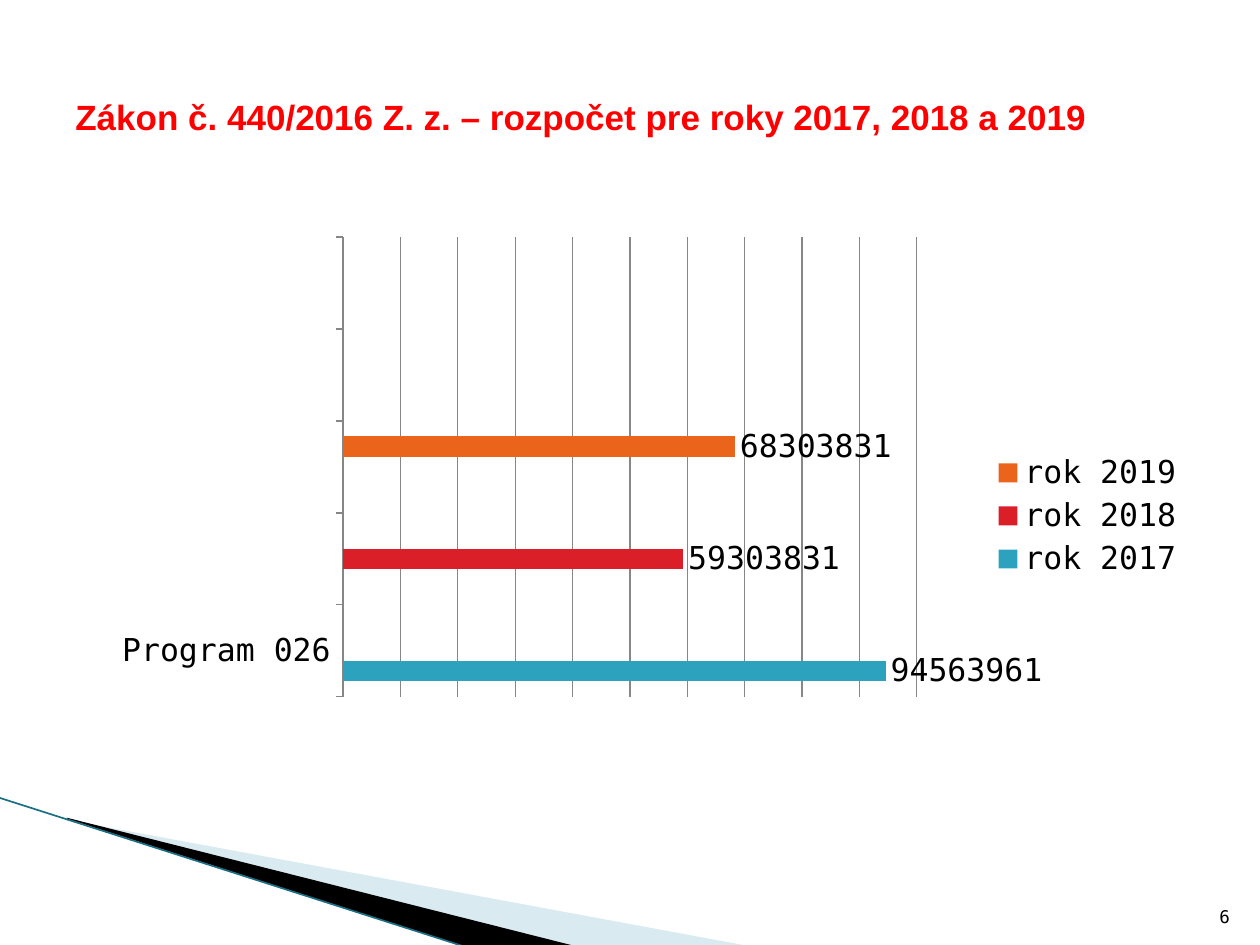
"""Build the budget slide: programme 026 spending for 2017 to 2019."""
from lxml import etree
from pptx import Presentation
from pptx.chart.data import CategoryChartData
from pptx.dml.color import RGBColor
from pptx.enum.chart import (XL_CHART_TYPE, XL_LABEL_POSITION, XL_LEGEND_POSITION,
                             XL_TICK_LABEL_POSITION, XL_TICK_MARK)
from pptx.enum.shapes import MSO_CONNECTOR
from pptx.enum.text import MSO_ANCHOR, PP_ALIGN
from pptx.oxml import parse_xml
from pptx.oxml.ns import nsdecls, qn
from pptx.util import Inches, Pt

BAR = XL_CHART_TYPE.BAR_CLUSTERED
OUTSIDE_END = XL_LABEL_POSITION.OUTSIDE_END
LEGEND_RIGHT = XL_LEGEND_POSITION.RIGHT
LABELS_LOW = XL_TICK_LABEL_POSITION.LOW
TICK_OUT, TICK_NONE = XL_TICK_MARK.OUTSIDE, XL_TICK_MARK.NONE
STRAIGHT = MSO_CONNECTOR.STRAIGHT
MIDDLE, BOTTOM = MSO_ANCHOR.MIDDLE, MSO_ANCHOR.BOTTOM
LEFT, RIGHT = PP_ALIGN.LEFT, PP_ALIGN.RIGHT

WIDTH, HEIGHT = Inches(10), Inches(7.5)
COLORS = {"title": "FF0000", "text": "000000", "pale": "A0CBDC", "dark": "000000",
          "edge": "1B6F84", "grid": "868686",
          "rok 2017": "2DA2BF", "rok 2018": "DA1F28", "rok 2019": "EB641B"}
MONO = "DejaVu Sans Mono"

TEXTS = [
    {"text": "Zákon č. 440/2016 Z. z. – rozpočet pre roky 2017, 2018 a 2019",
     "area": (5, 4, 90, 16.67), "anchor": MIDDLE, "align": LEFT, "color": "title",
     "font": {"name": "Arial", "size": Pt(20), "bold": True}},
    {"text": "6", "area": (94.6, 93.47, 4, 5.33), "anchor": BOTTOM, "align": RIGHT,
     "color": "text", "font": {"name": MONO, "size": Pt(10)}},
]
CATEGORIES = ["Program 026", "", "", "", ""]
BUDGETS = [("rok 2017", 94563961), ("rok 2018", 59303831), ("rok 2019", 68303831)]
CHART_AREA = (5, 21.6, 90, 66)
PLOT_AREA = {"x": 0.247, "y": 0.053, "w": 0.506, "h": 0.737}
AXIS_SCALE = {"minimum_scale": 0, "maximum_scale": 100_000_000, "major_unit": 10_000_000,
              "has_major_gridlines": True, "major_tick_mark": TICK_NONE, "visible": False}
CATEGORY_AXIS = {"has_major_gridlines": False, "major_tick_mark": TICK_OUT,
                 "minor_tick_mark": TICK_NONE, "tick_label_position": LABELS_LOW}
LEGEND = {"position": LEGEND_RIGHT, "include_in_layout": False}
LABELS = {"show_value": True, "position": OUTSIDE_END,
          "number_format": "0", "number_format_is_linked": False}
WEDGES = [
    ("pale", 40, [(5.5, 86.8), (59.5, 100.13), (45.6, 100.13), (5.5, 86.67)]),
    ("dark", 100, [(5.3, 86.53), (45.7, 100.13), (37.2, 100.27), (5.4, 86.67)]),
]
EDGE = (-0.1, 84.4, 37.1, 100.27)


def place(percents):
    """Turn alternating horizontal and vertical percentages into slide lengths."""
    return [int((HEIGHT if i % 2 else WIDTH) * share / 100)
            for i, share in enumerate(percents)]


def assign(target, values):
    """Set every attribute in a dict of format values."""
    for key, value in values.items():
        setattr(target, key, value)


def rgb(key):
    """Look up a colour."""
    return RGBColor.from_string(COLORS[key])


def paint(fill, key):
    """Give a fill one solid colour."""
    fill.solid()
    fill.fore_color.rgb = rgb(key)


def draw_wedges(slide):
    """Draw the corner decoration."""
    for key, opacity, corners in WEDGES:
        start, *rest = [place(corner) for corner in corners]
        outline = slide.shapes.build_freeform(*start)
        outline.add_line_segments(rest, close=True)
        wedge = outline.convert_to_shape()
        wedge.shadow.inherit = False
        paint(wedge.fill, key)
        wedge.line.fill.background()
        if opacity < 100:
            tint = wedge.fill._xPr.find(".//" + qn("a:srgbClr"))
            etree.SubElement(tint, qn("a:alpha")).set("val", str(opacity * 1000))
    edge = slide.shapes.add_connector(STRAIGHT, *place(EDGE))
    edge.line.color.rgb = rgb("edge")
    edge.line.width = Pt(0.95)
    etree.SubElement(edge._element.spPr, qn("a:effectLst"))


def draw_chart(slide):
    """Draw one bar for each budget year, each in its own category."""
    budget = CategoryChartData(number_format="0")
    budget.categories = CATEGORIES
    for row, (year, amount) in enumerate(BUDGETS):
        budget.add_series(year, [amount if i == row else None
                                 for i in range(len(CATEGORIES))])
    chart = slide.shapes.add_chart(BAR, *place(CHART_AREA), budget).chart
    assign(chart, {"has_title": False, "has_legend": True})
    assign(chart.font, {"name": MONO, "size": Pt(18)})
    chart.font.color.rgb = rgb("text")
    assign(chart.legend, LEGEND)
    assign(chart.value_axis, AXIS_SCALE)
    assign(chart.category_axis, CATEGORY_AXIS)
    for ruled in (chart.value_axis.major_gridlines, chart.category_axis):
        ruled.format.line.color.rgb = rgb("grid")
        ruled.format.line.width = Pt(0.75)
    bars = chart.plots[0]
    assign(bars, {"gap_width": 150, "overlap": 0, "vary_by_categories": False})
    for year in bars.series:
        paint(year.format.fill, year.name)
        year.invert_if_negative = False
        assign(year.data_labels, LABELS)
    modes = [("layoutTarget", "inner"), ("xMode", "edge"), ("yMode", "edge")]
    parts = "".join(f'<c:{tag} val="{value}"/>' for tag, value in modes + list(PLOT_AREA.items()))
    plot = chart._chartSpace.chart.plotArea
    for automatic in plot.findall(qn("c:layout")):
        plot.remove(automatic)
    plot.insert(0, parse_xml(f'<c:layout {nsdecls("c")}><c:manualLayout>{parts}'
                             '</c:manualLayout></c:layout>'))


def write_texts(slide):
    """Write the title and the page number."""
    for entry in TEXTS:
        frame = slide.shapes.add_textbox(*place(entry["area"])).text_frame
        assign(frame, {"word_wrap": True, "vertical_anchor": entry["anchor"]})
        line = frame.paragraphs[0]
        assign(line, {"text": entry["text"], "alignment": entry["align"]})
        font = line.runs[0].font
        assign(font, entry["font"])
        font.color.rgb = rgb(entry["color"])


def main():
    """Assemble and save the slide."""
    deck = Presentation()
    assign(deck, {"slide_width": WIDTH, "slide_height": HEIGHT})
    slide = deck.slides.add_slide(deck.slide_layouts[6])
    draw_wedges(slide)
    draw_chart(slide)
    write_texts(slide)
    deck.save("out.pptx")


if __name__ == "__main__":
    main()
